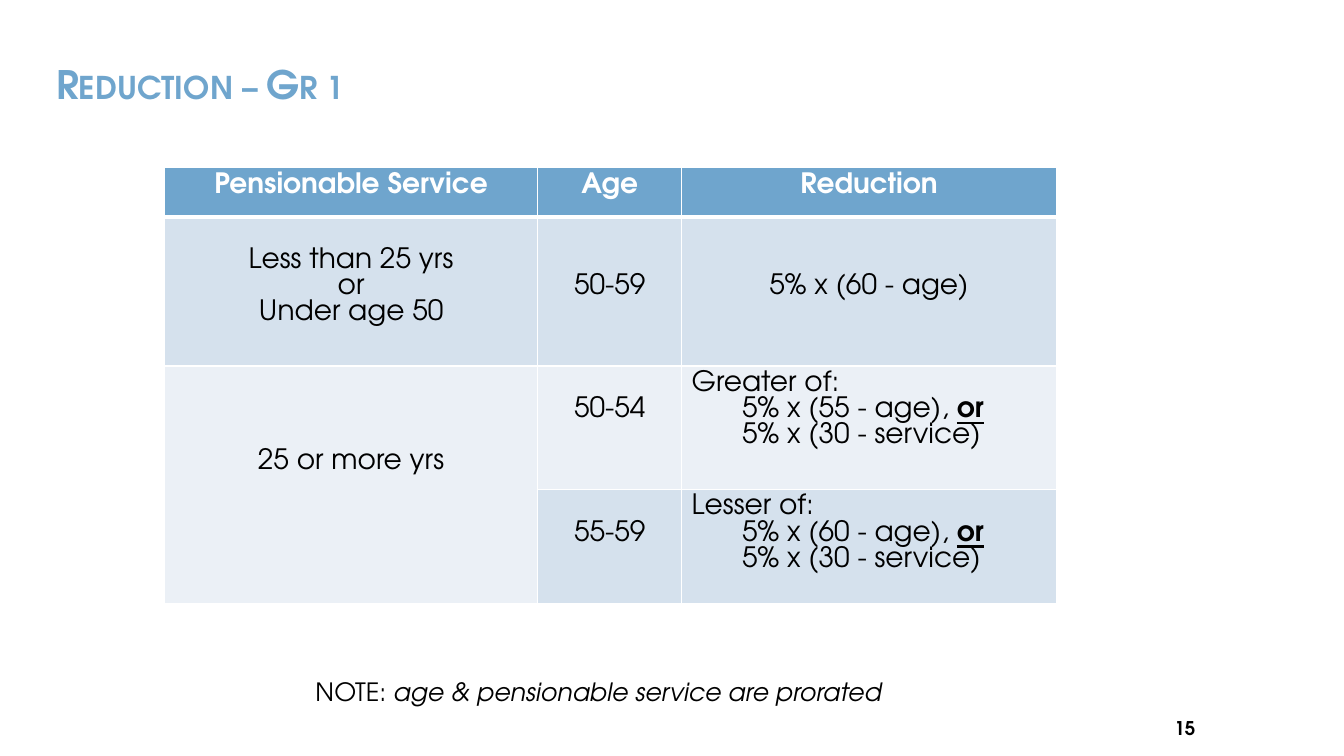
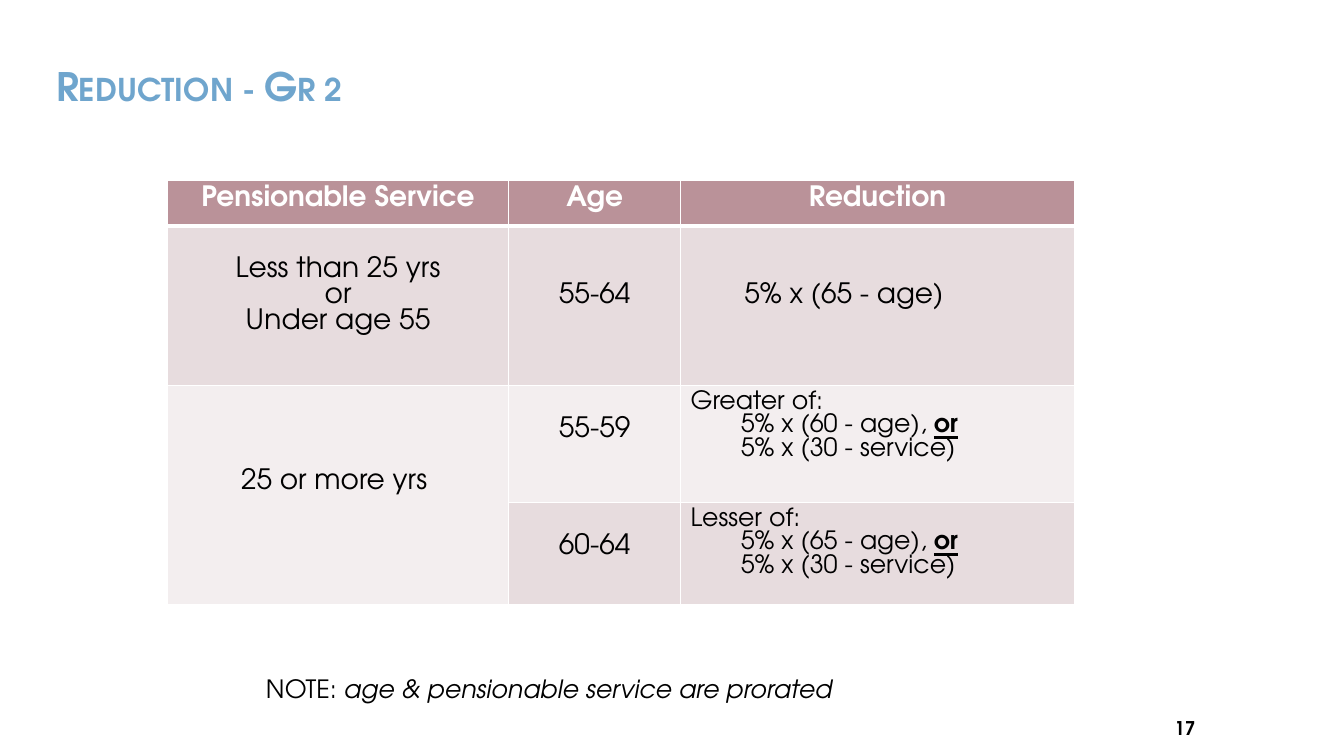
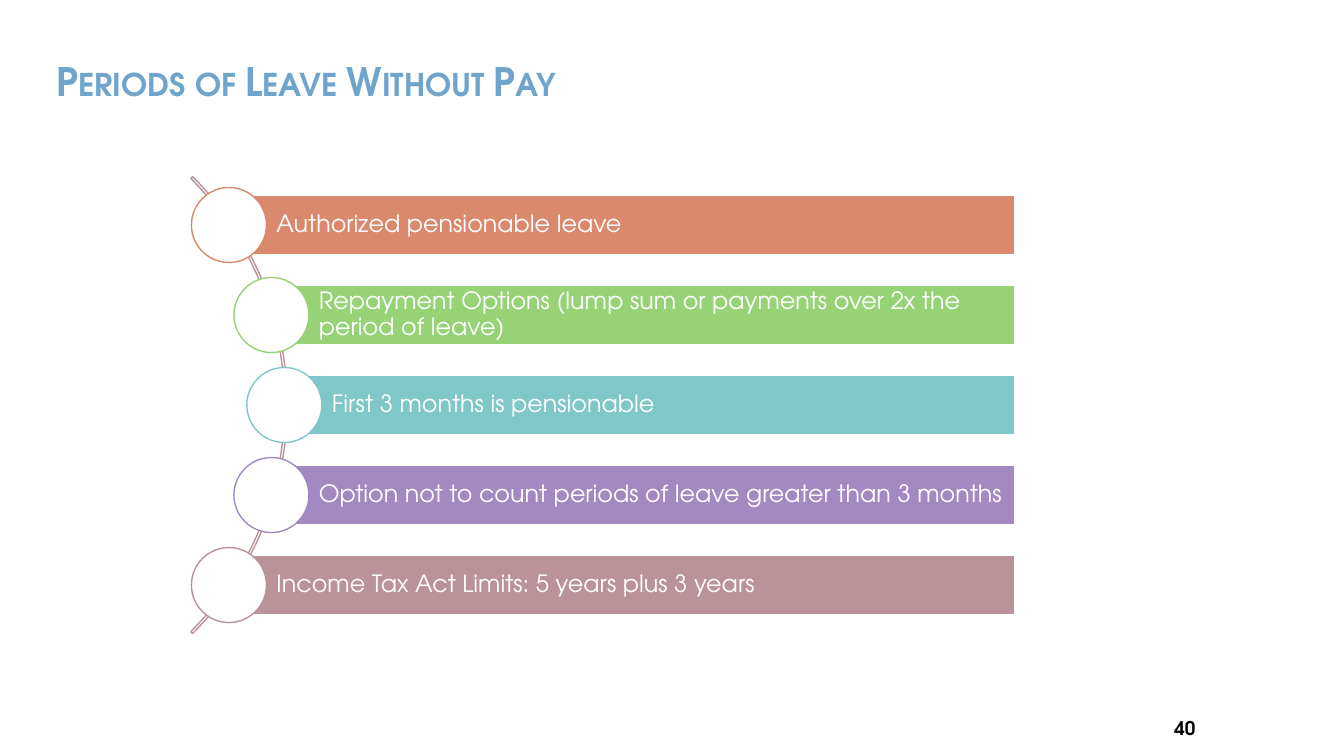
import math

import pptx
import pptx.util
import pptx.dml.color
import pptx.enum.shapes
import pptx.enum.text
import pptx.oxml.ns
from lxml import etree

Pt = pptx.util.Pt
ALIGN = pptx.enum.text.PP_ALIGN
ANCHOR = pptx.enum.text.MSO_ANCHOR
SHAPE = pptx.enum.shapes.MSO_SHAPE
qn = pptx.oxml.ns.qn

# Shared look
FONT = "TeX Gyre Adventor"
COLORS = {
    "white": "FFFFFF", "black": "000000",
    "blue": "6FA5CD", "blue mid": "D5E1ED", "blue pale": "EBF0F6",
    "rose": "BA9299", "rose mid": "E7DCDE", "rose pale": "F3EEEF",
    "orange": "DA896D", "green": "97D276", "teal": "80C7CA", "purple": "A289C2",
}
LINE_PITCH = 18.6       # height of one 20 pt table line
CELL_MARGIN = 3.6
DETAIL_INDENT = 36

# Content: a cell is (lines left free above, size, alignment, lines);
# a line is (indent, plain text, emphasised ending)
HEADINGS = ["Pensionable Service", "Age", "Reduction"]
NOTE = ("NOTE:", " age & pensionable service are prorated")


def centred(free, *texts):
    return free, 20, ALIGN.CENTER, [(0, text, "") for text in texts]


def choice(heading, age_limit, size):
    return 0, size, ALIGN.LEFT, [
        (0, heading, ""),
        (DETAIL_INDENT, f"5% x ({age_limit} - age), ", "or"),
        (DETAIL_INDENT, "5% x (30 - service)", ""),
    ]


REDUCTIONS = [
    dict(title="Reduction – Gr 1", title_size=(273, 33.6), number="15", color="blue",
         at=(117.4, 119.5), columns=[266.8, 102.7, 267.7], rows=[35.3, 106.7, 88, 81.4],
         note_at=(218.2, 479.5, 436),
         cells=[[centred(1, "Less than 25 yrs", "or", "Under age 50"),
                 centred(2, "50-59"), centred(2, "5% x (60 - age)")],
                [centred(3, "25 or more yrs"), centred(1, "50-54"),
                 choice("Greater of:", 55, 20)],
                [None, centred(1, "55-59"), choice("Lesser of:", 60, 20)]]),
    dict(title="Reduction - Gr 2", title_size=(286.5, 36.5), number="17", color="rose",
         at=(119.5, 128.9), columns=[244, 122.6, 281.4], rows=[32.4, 114.1, 83.5, 73],
         note_at=(182.9, 477.4, 598),
         cells=[[centred(1, "Less than 25 yrs", "or", "Under age 55"),
                 centred(2, "55-64"),
                 (2, 20, ALIGN.LEFT, [(38.5, "5% x (65 - age)", "")])],
                [centred(3, "25 or more yrs "), centred(1, "55-59"),
                 choice("Greater of:", 60, 18)],
                [None, centred(1, "60-64"), choice("Lesser of:", 65, 18)]]),
]
LEAVE = dict(title="Periods of Leave Without Pay", title_size=(392.4, 29.6), number="40")
LEAVE_POINTS = [
    ("Authorized pensionable leave", "orange"),
    ("Repayment Options (lump sum or payments over 2x the period of leave)", "green"),
    ("First 3 months is pensionable", "teal"),
    ("Option not to count periods of leave greater than 3 months", "purple"),
    ("Income Tax Act Limits: 5 years plus 3 years", "rose"),
]


# Helpers
def rgb(name):
    return pptx.dml.color.RGBColor.from_string(COLORS[name])


def set_font(font, size, color, bold=False):
    font.name, font.size, font.bold = FONT, Pt(size), bold
    font.color.rgb = rgb(color)


def add_box(slide, left, top, width, height):
    box = slide.shapes.add_textbox(Pt(left), Pt(top), Pt(width), Pt(height))
    box.text_frame.word_wrap = True
    return box


def add_outline(slide, kind, left, top, width, height, line, fill=None):
    shape = slide.shapes.add_shape(kind, Pt(left), Pt(top), Pt(width), Pt(height))
    shape.shadow.inherit = False
    if fill:
        shape.fill.solid()
        shape.fill.fore_color.rgb = rgb(fill)
    else:
        shape.fill.background()
    shape.line.color.rgb = rgb(line)
    shape.line.width = Pt(1)
    return shape


def add_page(deck, title, title_size, number):
    slide = deck.slides.add_slide(deck.slide_layouts[6])
    heading = add_box(slide, 33.1, 45, *title_size)
    heading.fill.solid()
    heading.fill.fore_color.rgb = rgb("white")
    heading.text_frame.vertical_anchor = ANCHOR.MIDDLE
    line = heading.text_frame.paragraphs[0]
    line.line_spacing = 0.9
    run = line.add_run()
    run.text = title
    set_font(line.font, 28, "blue", bold=True)
    run._r.get_or_add_rPr().set("cap", "small")

    page_number = add_box(slide, 699, 508.3, 162, 21.6).text_frame.paragraphs[0]
    page_number.text = number
    page_number.alignment = ALIGN.RIGHT
    set_font(page_number.font, 13.5, "black", bold=True)
    return slide


def set_borders(cell, row):
    props = cell._tc.get_or_add_tcPr()
    widths = {"lnL": 1, "lnR": 1, "lnT": 3 if row == 1 else 1, "lnB": 3 if row == 0 else 1}
    for place, (side, width) in enumerate(widths.items()):
        border = etree.Element(qn("a:" + side), w=str(Pt(width)))
        paint = etree.SubElement(border, qn("a:solidFill"))
        etree.SubElement(paint, qn("a:srgbClr"), val=COLORS["white"])
        props.insert(place, border)


def fill_cell(cell, content, color, bold):
    free, size, alignment, lines = content
    cell.margin_top = Pt(CELL_MARGIN + free * LINE_PITCH)
    frame = cell.text_frame
    for i, (indent, plain, emphasised) in enumerate(lines):
        line = frame.add_paragraph() if i else frame.paragraphs[0]
        line.alignment = alignment
        if indent:
            line._p.get_or_add_pPr().set("marL", str(Pt(indent)))
        set_font(line.font, size, color, bold)
        line.add_run().text = plain
        if emphasised:
            ending = line.add_run()
            ending.text = emphasised
            ending.font.bold = ending.font.underline = True


def add_reduction(deck, page):
    slide = add_page(deck, page["title"], page["title_size"], page["number"])
    columns, rows, color = page["columns"], page["rows"], page["color"]
    left, top = page["at"]
    table = slide.shapes.add_table(len(rows), len(columns), Pt(left), Pt(top),
                                   Pt(sum(columns)), Pt(sum(rows))).table
    table.first_row = table.horz_banding = False
    for column, width in zip(table.columns, columns):
        column.width = Pt(width)
    for row, height in zip(table.rows, rows):
        row.height = Pt(height)
    table.cell(2, 0).merge(table.cell(3, 0))

    fills = [color, color + " mid", color + " pale", color + " mid"]
    contents = [[centred(0, text) for text in HEADINGS]] + page["cells"]
    for r, row in enumerate(contents):
        for c, content in enumerate(row):
            cell = table.cell(r, c)
            cell.fill.solid()
            cell.fill.fore_color.rgb = rgb(fills[r])
            set_borders(cell, r)
            if content:
                fill_cell(cell, content, "black" if r else "white", bold=r == 0)

    # Note under the table
    note = add_box(slide, *page["note_at"], 28.8).text_frame.paragraphs[0]
    set_font(note.font, 18, "black")
    for text in NOTE:
        run = note.add_run()
        run.text = text
    run.font.italic = True


def add_leave(deck):
    slide = add_page(deck, **LEAVE)
    # Arc that the circles sit on
    centre_x, centre_y, arc_size, radius = -25.6, 289.3, 461.5, 228.7
    arc = add_outline(slide, SHAPE.BLOCK_ARC, centre_x - arc_size / 2,
                      centre_y - arc_size / 2, arc_size, arc_size, "rose")
    for i, value in enumerate((189, 27, 0.004)):
        arc.adjustments[i] = value

    # Bars and circles, spread evenly around the middle of the arc
    pitch, bar_height, bar_right, circle = 64.3, 43, 725, 53.6
    for i, (text, color) in enumerate(LEAVE_POINTS):
        offset = (i - (len(LEAVE_POINTS) - 1) / 2) * pitch
        x = centre_x + math.sqrt(radius ** 2 - offset ** 2)
        y = centre_y + offset
        bar = add_outline(slide, SHAPE.RECTANGLE, x, y - bar_height / 2,
                          bar_right - x, bar_height, "white", color)
        frame = bar.text_frame
        frame.word_wrap = True
        frame.vertical_anchor = ANCHOR.MIDDLE
        frame.margin_left = Pt(34)
        frame.margin_right = frame.margin_top = frame.margin_bottom = Pt(3.6)
        point = frame.paragraphs[0]
        point.text = text
        point.alignment = ALIGN.LEFT
        point.line_spacing = 0.9
        set_font(point.font, 17, "white")
        add_outline(slide, SHAPE.OVAL, x - circle / 2, y - circle / 2,
                    circle, circle, color, "white")


def main():
    deck = pptx.Presentation()
    deck.slide_width, deck.slide_height = Pt(960), Pt(540)
    for page in REDUCTIONS:
        add_reduction(deck, page)
    add_leave(deck)
    deck.save("out.pptx")


if __name__ == "__main__":
    main()
